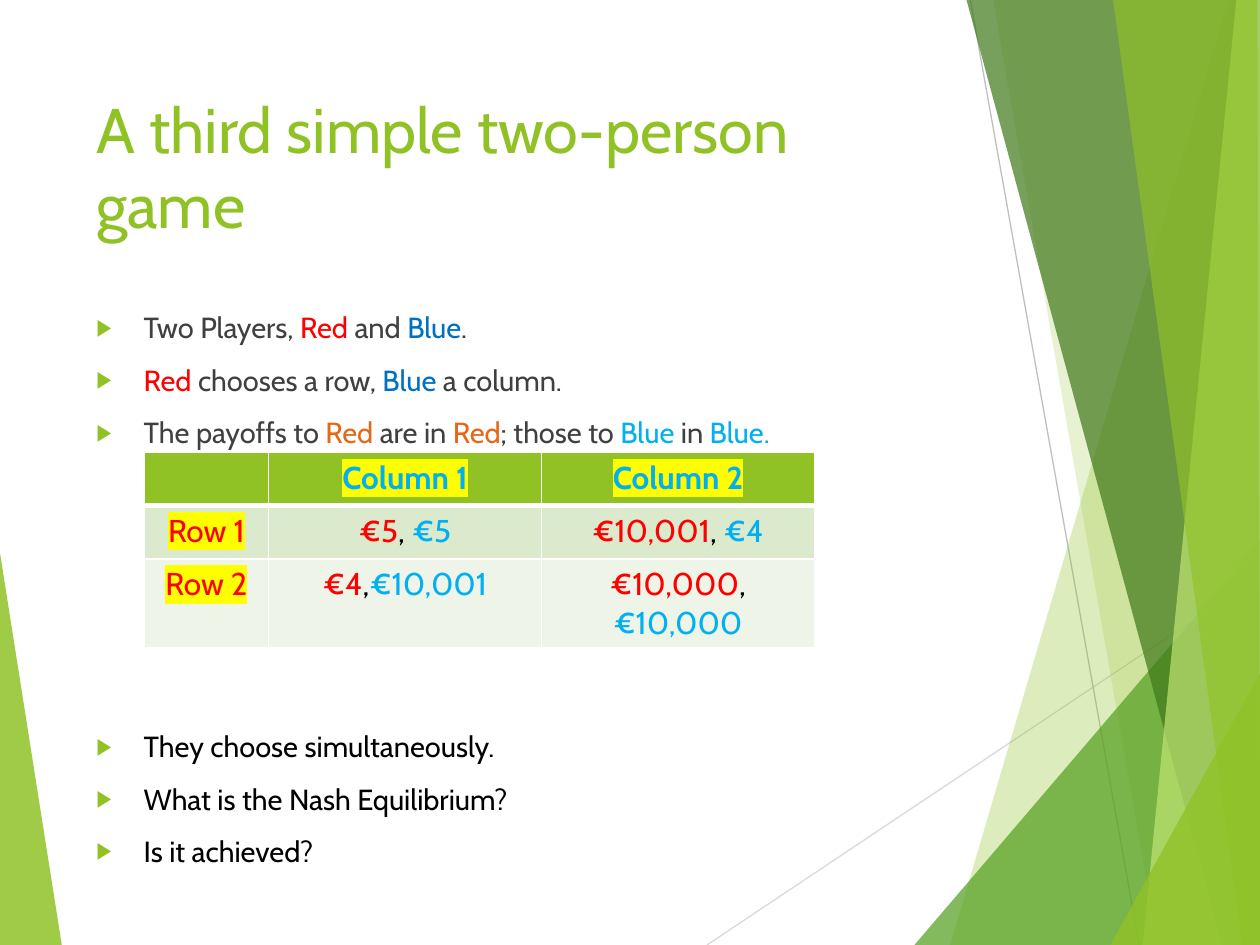
from dataclasses import dataclass

from pptx import Presentation
from pptx.dml.color import RGBColor as RGB
from pptx.enum.shapes import MSO_CONNECTOR as Conn
from pptx.enum.text import MSO_ANCHOR as Anchor, PP_ALIGN as Align
from pptx.oxml.ns import qn
from pptx.util import Pt
from lxml.etree import SubElement as Sub, Element

WIDE, HIGH = 720, 540


@dataclass(frozen=True)
class Theme:
    font: str = "Cabin"
    head: float = 36
    body: float = 16.6
    cell: float = 18
    lime: str = "90C226"
    leaf: str = "54A021"
    pine: str = "3F7819"
    pale: str = "C0E474"
    ink: str = "404040"
    black: str = "000000"
    white: str = "FFFFFF"
    red: str = "FF0000"
    blue: str = "0070C0"
    rust: str = "E76618"
    sky: str = "00B0F0"
    mark: str = "FFFF00"
    odd: str = "DBE9CD"
    even: str = "EEF4E8"
    rule: str = "D9D9D9"
    thin: str = "BFBFBF"


T = Theme()


def tint(parent, color):
    Sub(parent, qn("a:srgbClr"), val=color)


class Deck:
    def __init__(self, theme):
        self.theme = theme
        self.prs = Presentation()
        self.prs.slide_width, self.prs.slide_height = Pt(WIDE), Pt(HIGH)
        self.slide = self.prs.slides.add_slide(self.prs.slide_layouts[6])
        self.shapes = self.slide.shapes

    def facet(self, points, color, alpha):
        """Draw a flat polygon; alpha is its opacity in percent."""
        spots = [(Pt(x), Pt(y)) for x, y in points]
        pen = self.shapes.build_freeform(*spots[0])
        pen.add_line_segments(spots[1:], close=True)
        shape = pen.convert_to_shape()
        shape.shadow.inherit = False
        shape.line.fill.background()
        shape.fill.solid()
        shape.fill.fore_color.rgb = RGB.from_string(color)
        clr = shape._element.spPr.find(qn("a:solidFill"))[0]
        Sub(clr, qn("a:alpha"), val=str(alpha * 1000))

    def line(self, x1, y1, x2, y2, color):
        line = self.shapes.add_connector(
            Conn.STRAIGHT, Pt(x1), Pt(y1), Pt(x2), Pt(y2))
        line.line.color.rgb = RGB.from_string(color)
        line.line.width = Pt(0.75)
        Sub(line._element.spPr, qn("a:effectLst"))

    def run(self, para, text, color, size, bold=False, mark=None):
        run = para.add_run()
        run.text = text
        font = run.font
        font.name, font.size, font.bold = self.theme.font, Pt(size), bold
        font.color.rgb = RGB.from_string(color)
        if mark:
            light = Element(qn("a:highlight"))
            tint(light, mark)
            run._r.rPr.find(qn("a:solidFill")).addnext(light)

    def box(self, x, y, w, h):
        frame = self.shapes.add_textbox(Pt(x), Pt(y), Pt(w), Pt(h)).text_frame
        frame.word_wrap = True
        frame.vertical_anchor = Anchor.TOP
        return frame

    def title(self, text, *place):
        para = self.box(*place).paragraphs[0]
        self.run(para, text, self.theme.lime, self.theme.head)

    def bullets(self, items, *place):
        """Fill a box with items, each a space before and a list of runs."""
        frame = self.box(*place)
        for n, (space, runs) in enumerate(items):
            para = frame.add_paragraph() if n else frame.paragraphs[0]
            para.space_before = Pt(space)
            props = para._p.get_or_add_pPr()
            props.set("marL", str(Pt(27)))
            props.set("indent", str(-Pt(27)))
            tint(Sub(props, qn("a:buClr")), self.theme.lime)
            Sub(props, qn("a:buSzPct"), val="80000")
            Sub(props, qn("a:buFont"), typeface="Arial")
            Sub(props, qn("a:buChar"), char="▶")
            for text, color in runs:
                self.run(para, text, color, self.theme.body)

    def edges(self, cell, foot, top):
        props = cell._tc.get_or_add_tcPr()
        for side, width in (("L", 1), ("R", 1), ("T", top), ("B", foot)):
            edge = Sub(props, qn(f"a:ln{side}"), w=str(Pt(width)))
            tint(Sub(edge, qn("a:solidFill")), self.theme.white)

    def table(self, rows, fills, x, y, cols, high):
        """Draw rows of cells, each a list of (text, color, bold, mark)."""
        grid = self.shapes.add_table(
            len(rows), len(cols), Pt(x), Pt(y),
            Pt(sum(cols)), Pt(high * len(rows))).table
        for col, wide in zip(grid.columns, cols):
            col.width = Pt(wide)
        for r, (row, fill) in enumerate(zip(rows, fills)):
            grid.rows[r].height = Pt(high)
            for c, runs in enumerate(row):
                cell = grid.cell(r, c)
                self.edges(cell, 1 if r else 3, 3 if r == 1 else 1)
                cell.fill.solid()
                cell.fill.fore_color.rgb = RGB.from_string(fill)
                para = cell.text_frame.paragraphs[0]
                para.alignment = Align.CENTER
                for text, color, bold, mark in runs:
                    self.run(para, text, color, self.theme.cell, bold, mark)


def band(top, foot, end=WIDE):
    """Outline from a slanted left edge to the right of the slide."""
    return [(top, 0), (foot, HIGH), (WIDE, HIGH), (end, 0)]


def wedge(foot, peak):
    return [(foot, HIGH), (WIDE, peak), (WIDE, HIGH)]


def label(text, color, bold=False):
    return [(text, color, bold, T.mark)]


def pay(red, blue, gap=", "):
    parts = (red, T.red), (gap, T.black), (blue, T.sky)
    return [(text, color, False, None) for text, color in parts]


def main():
    deck = Deck(T)
    deck.facet([(0, 316), (35.3, HIGH), (0, HIGH)], T.lime, 85)
    deck.line(404, 540, 720, 329, T.rule)
    deck.line(554.5, 0, 651, 540, T.thin)
    for points, color, alpha in (
            (band(702, 543), T.lime, 30),
            (band(567.5, 661.5), T.lime, 20),
            (wedge(522.5, 309), T.leaf, 72),
            (band(552.3, 698.5), T.pine, 70),
            (band(706.5, 653), T.pale, 70),
            (band(636, 710, 718.5), T.lime, 65),
            (wedge(634.5, 385), T.lime, 80)):
        deck.facet(points, color, alpha)

    deck.title("A third simple two-person game", 48, 48, 500, 104)
    # The wide space before the fourth point leaves room for the table.
    deck.bullets([
        (10, [("Two Players, ", T.ink), ("Red", T.red), (" and ", T.ink),
              ("Blue", T.blue), (".", T.ink)]),
        (10, [("Red", T.red), (" chooses a row, ", T.ink),
              ("Blue", T.blue), (" a column.", T.ink)]),
        (10, [("The payoffs to ", T.ink), ("Red", T.rust),
              (" are in ", T.ink), ("Red", T.rust),
              ("; those to ", T.ink), ("Blue", T.sky),
              (" in ", T.ink), ("Blue.", T.sky)]),
        (159.5, [("They choose simultaneously.", T.black)]),
        (10, [("What is the Nash Equilibrium?", T.black)]),
        (10, [("Is it achieved?", T.black)]),
    ], 48, 173.5, 500, 305)
    deck.table([
        [[], label("Column 1", T.sky, True), label("Column 2", T.sky, True)],
        [label("Row 1", T.red), pay("€5", "€5"), pay("€10,001", "€4")],
        [label("Row 2", T.red), pay("€4", "€10,001", ","),
         pay("€10,000", "€10,000")],
    ], (T.lime, T.odd, T.even), 82.5, 258.5, (71, 156, 156), 30.5)
    deck.prs.save("out.pptx")


if __name__ == "__main__":
    main()
